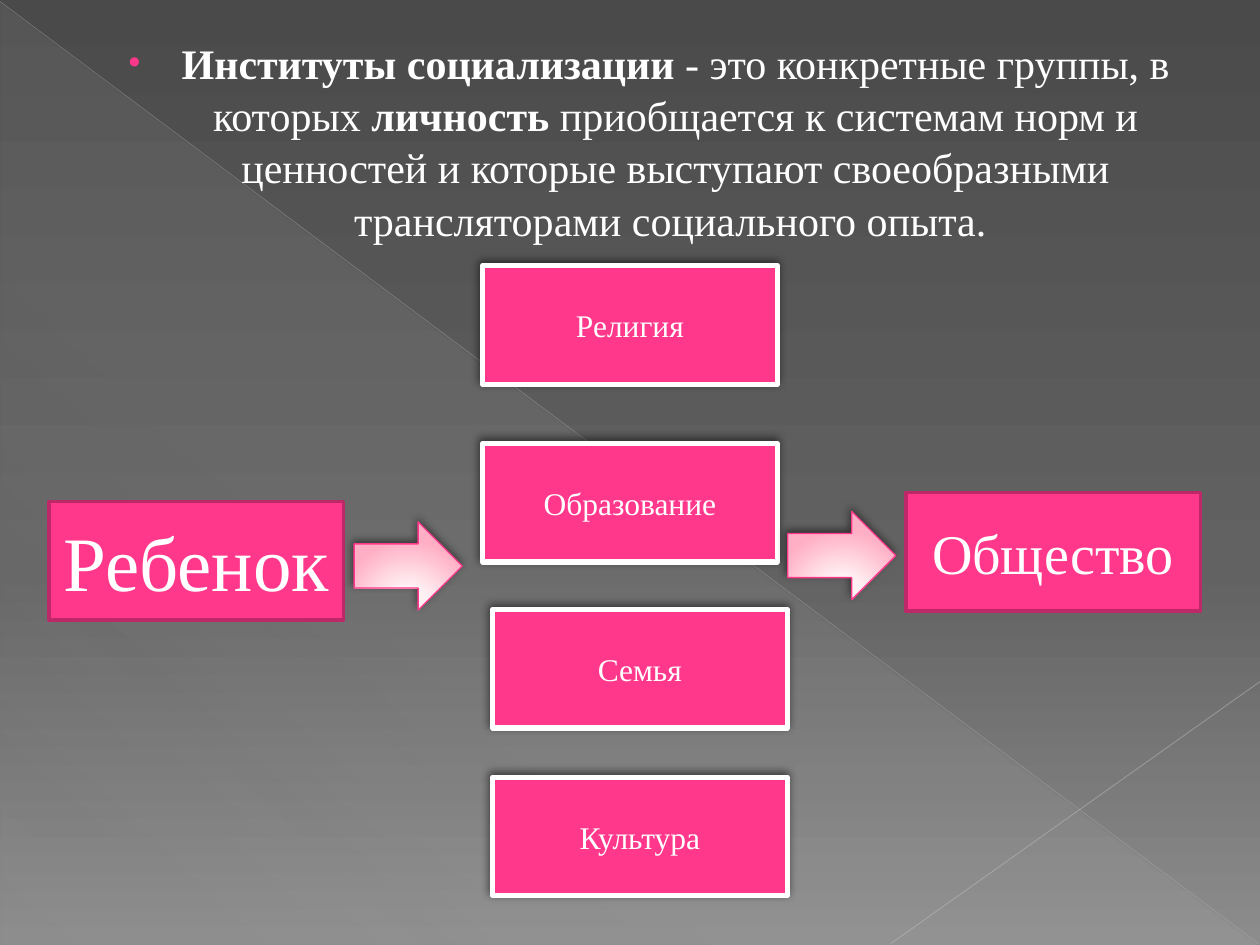
from dataclasses import dataclass

from lxml import etree
from pptx import Presentation
from pptx.dml.color import RGBColor
from pptx.enum.shapes import MSO_CONNECTOR, MSO_SHAPE
from pptx.enum.text import MSO_ANCHOR, MSO_AUTO_SIZE, PP_ALIGN
from pptx.oxml.ns import qn
from pptx.util import Cm, Pt

RECTANGLE = MSO_SHAPE.RECTANGLE
RIGHT_ARROW = MSO_SHAPE.RIGHT_ARROW
RIGHT_TRIANGLE = MSO_SHAPE.RIGHT_TRIANGLE
STRAIGHT = MSO_CONNECTOR.STRAIGHT
CENTER = PP_ALIGN.CENTER
MIDDLE = MSO_ANCHOR.MIDDLE

FONT = "Times New Roman"
COLOURS = {
    "pink": "FF388C",
    "dark pink": "BD2968",
    "white": "FFFFFF",
    "black": "000000",
    "long line": "BFBFBF",
    "short line": "C6C6C6",
}
# Gradient stops: position, colour, opacity (all but colour in percent)
BACKGROUND_STOPS = [(0, "4A4A4A", 100), (60, "626262", 100), (100, "8C8C8C", 100)]
TRIANGLE_STOPS = [(0, "D2D2D2", 10), (70, "D2D2D2", 8), (100, "D2D2D2", 1)]
ARROW_STOPS = [(0, "FFF4F7", 100), (34, "FFF0F3", 100), (100, "FFAFC5", 100)]

BOX_WIDTH, BOX_HEIGHT = 5.94, 2.39
ARROW_WIDTH, ARROW_HEIGHT = 2.18, 1.78


@dataclass
class Box:
    text: str
    left: float
    top: float
    size: int = 18
    border: str = "white"
    border_width: float = 3
    shadow: bool = True


@dataclass
class Line:
    start: tuple[float, float]
    end: tuple[float, float]
    colour: str
    width: float
    opacity: int


DECOR_LINES = [
    Line((0, 0.03), (25.37, 19.02), "long line", 0.39, 35),
    Line((25.4, 13.74), (17.96, 19.02), "short line", 0.47, 45),
]
BOXES = [
    Box("Семья", 9.93, 12.29),
    Box("Образование", 9.73, 8.94),
    Box("Религия", 9.73, 5.36),
    Box("Общество", 18.26, 9.93, 32, "dark pink", 2, False),
    Box("Культура", 9.93, 15.67),
    Box("Ребенок", 0.99, 10.11, 44, "dark pink", 2, False),
]
ARROWS = [(7.14, 10.52), (15.88, 10.31)]
DEFINITION = [
    ("Институты социализации", True),
    (" - это конкретные группы, в которых ", False),
    ("личность", True),
    (" приобщается к системам норм и ценностей и которые выступают "
     "своеобразными трансляторами социального опыта. ", False),
]


def rgb(name: str) -> RGBColor:
    return RGBColor.from_string(COLOURS[name])


def add_node(parent, tag: str, **attributes):
    node = etree.SubElement(parent, qn(tag))
    for name, value in attributes.items():
        node.set(name, str(value))
    return node


def set_gradient(fill, properties, stops: list, angle: int | None = None) -> None:
    """Linear at the given angle, or circular around a point below the shape."""
    fill.solid()
    solid = properties.find(qn("a:solidFill"))
    gradient = etree.Element(qn("a:gradFill"), rotWithShape="1")
    stop_list = add_node(gradient, "a:gsLst")
    for position, colour, opacity in stops:
        stop = add_node(stop_list, "a:gs", pos=position * 1000)
        colour_node = add_node(stop, "a:srgbClr", val=colour)
        if opacity < 100:
            add_node(colour_node, "a:alpha", val=opacity * 1000)
    if angle is None:
        circle = add_node(gradient, "a:path", path="circle")
        add_node(circle, "a:fillToRect", l=50000, t=155000, r=50000, b=-55000)
    else:
        add_node(gradient, "a:lin", ang=angle * 60000, scaled=0)
    properties.replace(solid, gradient)


def add_shadow(shape) -> None:
    effects = shape.element.spPr.find(qn("a:effectLst"))
    shadow = add_node(effects, "a:outerShdw", blurRad=Pt(5), dist=Pt(2),
                      dir=245 * 60000, algn="tl", rotWithShape=0)
    colour = add_node(shadow, "a:srgbClr", val=COLOURS["black"])
    add_node(colour, "a:alpha", val=50000)


def add_plain_shape(slide, kind, left: float, top: float, width: float, height: float):
    shape = slide.shapes.add_shape(kind, Cm(left), Cm(top), Cm(width), Cm(height))
    shape.shadow.inherit = False
    return shape


def set_border(shape, colour: str, width: float) -> None:
    shape.line.color.rgb = rgb(colour)
    shape.line.width = Pt(width)


def add_run(para, text: str, size: int, bold: bool = False) -> None:
    run = para.add_run()
    run.text = text
    run.font.color.rgb = rgb("white")
    for name, value in {"name": FONT, "size": Pt(size), "bold": bold}.items():
        setattr(run.font, name, value)


def draw_line(slide, line: Line) -> None:
    points = [Cm(value) for value in line.start + line.end]
    connector = slide.shapes.add_connector(STRAIGHT, *points)
    set_border(connector, line.colour, line.width)
    properties = connector.element.spPr
    colour = properties.find(".//" + qn("a:srgbClr"))
    add_node(colour, "a:alpha", val=line.opacity * 1000)
    add_node(properties, "a:effectLst")


def draw_backdrop(slide) -> None:
    fill = slide.background.fill
    fill.solid()
    properties = slide.element.find(".//" + qn("p:bgPr"))
    set_gradient(fill, properties, BACKGROUND_STOPS, 90)
    triangle = add_plain_shape(slide, RIGHT_TRIANGLE, 0.02, 0.05, 25.35, 19)
    set_gradient(triangle.fill, triangle.element.spPr, TRIANGLE_STOPS, 133)
    triangle.line.fill.background()
    for line in DECOR_LINES:
        draw_line(slide, line)


def write_definition(body) -> None:
    place = {"left": 1.57, "top": 0.58, "width": 22.86, "height": 4.95}
    for name, value in place.items():
        setattr(body, name, Cm(value))
    body.element.getparent().append(body.element)  # in front of the backdrop
    body.text_frame.auto_size = MSO_AUTO_SIZE.NONE
    para = body.text_frame.paragraphs[0]
    para.alignment = CENTER
    para.line_spacing = 1.04
    properties = para._p.get_or_add_pPr()
    properties.set("marL", str(Cm(1.24)))
    properties.set("indent", str(Cm(-1.07)))
    add_node(add_node(properties, "a:buClr"), "a:srgbClr", val=COLOURS["pink"])
    add_node(properties, "a:buSzPct", val=80000)
    add_node(properties, "a:buChar", char="•")
    for text, bold in DEFINITION:
        add_run(para, text, 24, bold)


def draw_box(slide, box: Box) -> None:
    shape = add_plain_shape(slide, RECTANGLE, box.left, box.top, BOX_WIDTH, BOX_HEIGHT)
    shape.fill.solid()
    shape.fill.fore_color.rgb = rgb("pink")
    set_border(shape, box.border, box.border_width)
    if box.shadow:
        add_shadow(shape)
    shape.text_frame.vertical_anchor = MIDDLE
    para = shape.text_frame.paragraphs[0]
    para.alignment = CENTER
    add_run(para, box.text, box.size)


def draw_arrow(slide, left: float, top: float) -> None:
    arrow = add_plain_shape(slide, RIGHT_ARROW, left, top, ARROW_WIDTH, ARROW_HEIGHT)
    set_gradient(arrow.fill, arrow.element.spPr, ARROW_STOPS)
    set_border(arrow, "pink", 0.75)
    add_shadow(arrow)


def main() -> None:
    deck = Presentation()
    deck.slide_width, deck.slide_height = Cm(25.4), Cm(19.05)
    page = deck.slides.add_slide(deck.slide_layouts[1])
    title, body = page.placeholders
    title.element.getparent().remove(title.element)
    draw_backdrop(page)
    write_definition(body)
    for box in BOXES:
        draw_box(page, box)
    for left, top in ARROWS:
        draw_arrow(page, left, top)
    deck.save("out.pptx")


if __name__ == "__main__":
    main()
